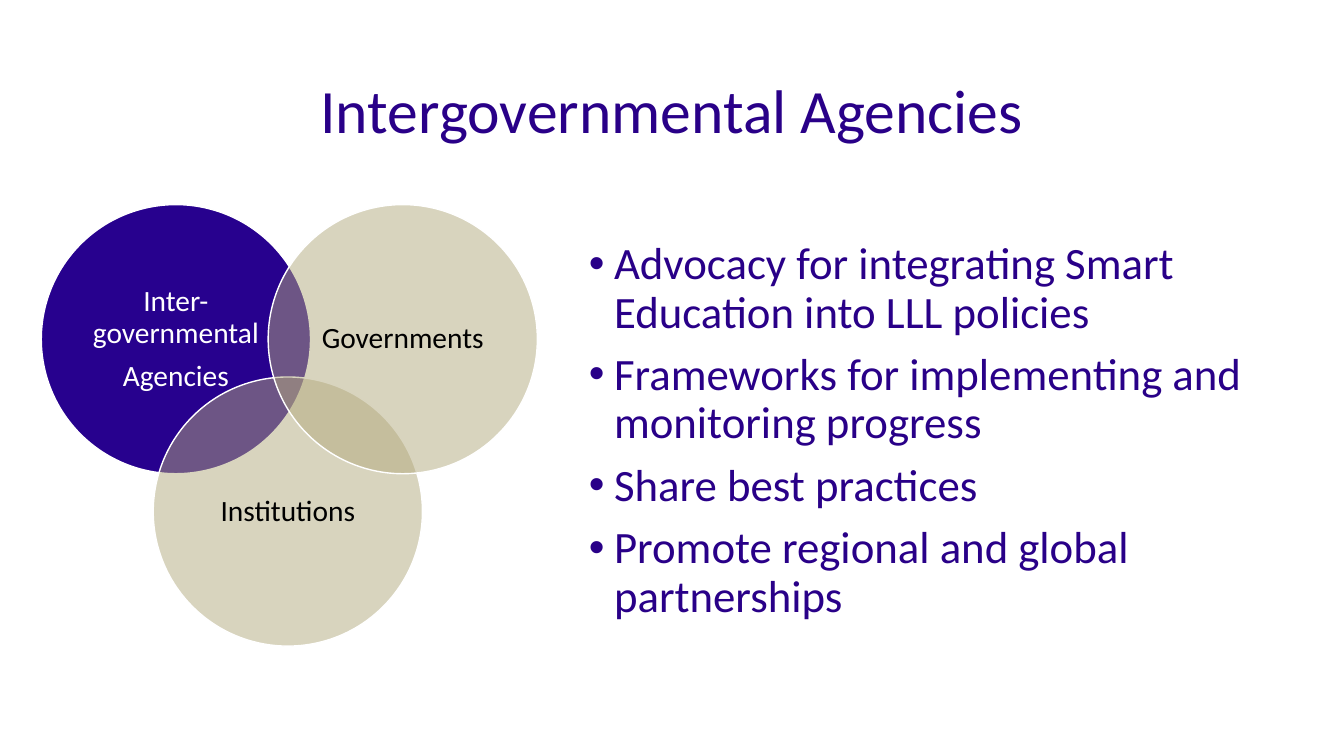
from pptx import Presentation
from pptx.dml.color import RGBColor
from pptx.enum.shapes import MSO_SHAPE
from pptx.enum.text import MSO_ANCHOR, MSO_AUTO_SIZE, PP_ALIGN
from pptx.oxml.ns import qn
from pptx.util import Inches, Pt
from lxml import etree

OVAL = MSO_SHAPE.OVAL
MIDDLE = MSO_ANCHOR.MIDDLE
NO_FIT = MSO_AUTO_SIZE.NONE
CENTER = PP_ALIGN.CENTER

INDIGO = RGBColor(0x29, 0x00, 0x88)
DEEP_INDIGO = RGBColor(0x27, 0x01, 0x8E)
SAND = RGBColor(0xB3, 0xAA, 0x7E)
WHITE = RGBColor(0xFF, 0xFF, 0xFF)
BLACK = RGBColor(0x00, 0x00, 0x00)

FONT = "Calibri"
LINE_SPACING = 0.9
DIAMETER = 2.67

POINTS = [
    "Advocacy for integrating Smart Education into LLL policies",
    "Frameworks for implementing and monitoring progress",
    "Share best practices",
    "Promote regional and global partnerships",
]

# Offset in the diagram, label lines, fill, opacity in percent, text colour
CIRCLES = [
    (0, 0, ["Inter-governmental", "Agencies"], DEEP_INDIGO, 100, WHITE),
    (1.11, 1.71, ["Institutions"], SAND, 50, BLACK),
    (2.25, 0, ["Governments"], SAND, 50, BLACK),
]


def place(s, left, top, width, height):
    s.left, s.top = Inches(left), Inches(top)
    s.width, s.height = Inches(width), Inches(height)


def write_paragraphs(tf, lines, size, color):
    """Fill a text frame with one styled paragraph per line."""
    tf.text = "\n".join(lines)
    for p in tf.paragraphs:
        p.line_spacing = LINE_SPACING
        p.space_before = p.space_after = Pt(0)
        for r in p.runs:
            r.font.name = FONT
            r.font.size = Pt(size)
            r.font.color.rgb = color


def add_title(slide, text, left, top, width, height):
    s = slide.shapes.title
    place(s, left, top, width, height)
    tf = s.text_frame
    write_paragraphs(tf, [text], 44, INDIGO)
    tf.auto_size = NO_FIT
    tf.vertical_anchor = MIDDLE
    tf.paragraphs[0].alignment = CENTER


def add_points(slide, points, left, top, width, height):
    s = slide.placeholders[1]
    place(s, left, top, width, height)
    tf = s.text_frame
    write_paragraphs(tf, points, 32, INDIGO)
    tf.auto_size = NO_FIT
    for i, p in enumerate(tf.paragraphs):
        p.space_before = Pt(10 if i else 0)
        pPr = p._p.get_or_add_pPr()
        pPr.set("marL", str(Inches(0.25)))
        pPr.set("indent", str(-Inches(0.25)))


def set_opacity(s, percent):
    color = s.fill._xPr.find(qn("a:solidFill"))[0]
    etree.SubElement(color, qn("a:alpha"), val=str(percent * 1000))


def add_circle(group, left, top, lines, fill, opacity, text_color):
    s = group.shapes.add_shape(OVAL, Inches(left), Inches(top),
                               Inches(DIAMETER), Inches(DIAMETER))
    s.shadow.inherit = False
    s.fill.solid()
    s.fill.fore_color.rgb = fill
    if opacity < 100:
        set_opacity(s, opacity)
    s.line.color.rgb = WHITE
    s.line.width = Pt(1)

    tf = s.text_frame
    tf.word_wrap = True
    tf.vertical_anchor = MIDDLE
    tf.margin_left = tf.margin_right = Inches(0.09)
    tf.margin_top = tf.margin_bottom = Inches(0.09)
    write_paragraphs(tf, lines, 21, text_color)
    for p in tf.paragraphs:
        p.alignment = CENTER
    for p in tf.paragraphs[:-1]:
        p.space_after = Pt(8)


def add_venn(slide, left, top):
    group = slide.shapes.add_group_shape()
    for dx, dy, *style in CIRCLES:
        add_circle(group, left + dx, top + dy, *style)


def main():
    prs = Presentation()
    prs.slide_width, prs.slide_height = Inches(13.33), Inches(7.5)
    slide = prs.slides.add_slide(prs.slide_layouts[1])
    add_title(slide, "Intergovernmental Agencies", 0, 0.4, 13.33, 1.45)
    add_points(slide, POINTS, 5.74, 2.34, 7.33, 4.76)
    add_venn(slide, 0.41, 2.03)
    prs.save("out.pptx")


if __name__ == "__main__":
    main()
